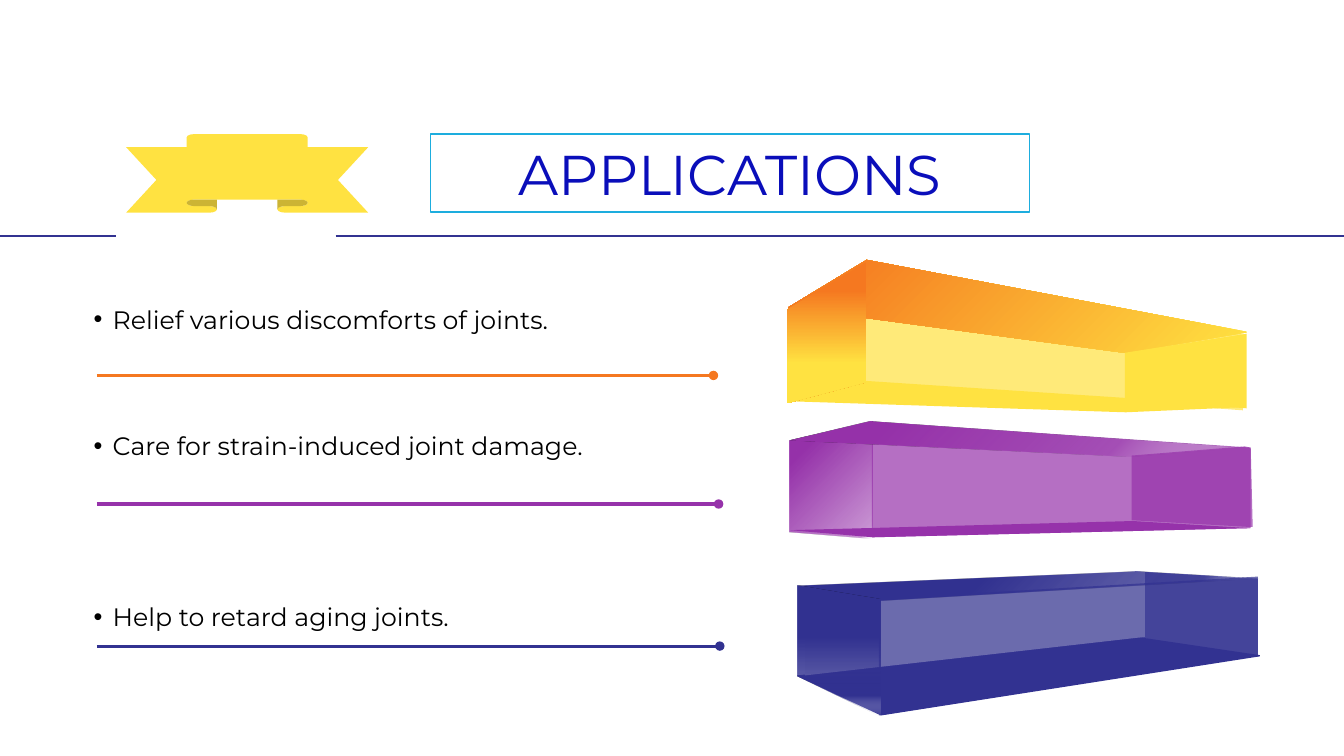
from pptx import Presentation
from pptx.dml.color import RGBColor
from pptx.enum import shapes, text
from pptx.oxml import parse_xml
from pptx.oxml.ns import qn
from pptx.util import Cm, Pt
from lxml import etree

# Theme: colours and type sizes
THEME = {
    "font": "Montserrat", "title_size": 40, "body_size": 18,
    "navy": "323291", "purple": "9632AA", "orange": "F57820", "yellow": "FFE241",
    "white": "FFFFFF", "pale": "F2F2F2", "black": "000000",
    "title": "0A0EBA", "frame": "1DADDE",
}

# Content, in centimetres
SLIDE_SIZE = (33.87, 19.05)
TITLE = "APPLICATIONS"
TITLE_BOX = (10.85, 3.38, 15.09, 1.96)
RIBBON_BOX = (3.18, 3.38, 6.1, 1.98)
HEADER_Y = 5.94
HEADER_RULES = [(0, 2.92), (8.46, 33.87)]
TEXT_LEFT, TEXT_WIDTH, TEXT_HEIGHT, INDENT = 2.11, 13.77, 1.02, 0.48
RULE_LEFT = 2.44

# Text, its top, end of the rule below it, rule colour
BENEFITS = [
    ("Relief various discomforts of joints.", 7.54, (17.98, 9.46), "orange"),
    ("Care for strain-induced joint damage.", 10.72, (18.11, 12.7), "purple"),
    ("Help to retard aging joints.", 15.04, (18.14, 16.28), "navy"),
]

# A gradient is (angle or "circle", stops); a stop is (position, colour, opacity)
NAVY_FADE = [(39, "navy", 100), (84, "navy", 70), (100, "white", 0)]
PURPLE_SIDE = [(21, "purple", 100), (93, "purple", 52), (100, "white", 0)]
PURPLE_TOP = [(20, "purple", 100), (72, "purple", 52), (100, "white", 0)]
ORANGE_SIDE = [(20, "orange", 100), (72, "yellow", 100), (100, "yellow", 100)]
ORANGE_TOP = [(0, "yellow", 100), (7, "orange", 100), (100, "yellow", 100)]

# Each glass block is a list of faces: (fill, corners); a plain fill is (colour, opacity)
NAVY_BLOCK = [
    (("navy", 100), [(28.65, 16.05), (20.09, 17.02), (20.09, 17.04), (22.2, 18.03),
                     (31.75, 16.54), (31.75, 16.51)]),
    (("navy", 70), [(31.7, 16.54), (31.7, 14.58), (28.6, 14.4), (28.6, 16.05)]),
    (("pale", 100), [(28.85, 16.05), (28.85, 14.4), (20.29, 14.78), (20.29, 17.02)]),
    ((45, NAVY_FADE), [(28.65, 14.4), (20.09, 14.76), (22.2, 15.14), (31.75, 14.58)]),
    (("navy", 70), [(22.15, 18.03), (31.7, 16.51), (31.7, 14.53), (22.15, 15.09)]),
    ((90, NAVY_FADE), [(20.09, 14.76), (20.09, 17.04), (22.2, 18.06), (22.2, 15.11)]),
]
PURPLE_BLOCK = [
    ((45, PURPLE_SIDE), [(21.97, 10.62), (19.89, 11.1), (19.89, 13.39), (22, 13.56),
                         (22, 10.62)]),
    (("purple", 70), [(31.52, 11.28), (21.97, 10.62), (21.97, 13.54), (31.52, 13.31)]),
    ((45, PURPLE_TOP), [(28.5, 11.51), (31.32, 11.28), (21.92, 10.62), (19.89, 11.1),
                        (28.45, 11.51)]),
    (("purple", 70), [(31.52, 11.28), (31.37, 11.25), (28.52, 11.48), (28.52, 13.11),
                      (31.5, 13.28), (31.57, 13.28)]),
    (("purple", 100), [(19.91, 13.36), (22, 13.54), (31.5, 13.31), (28.55, 13.13)]),
]
YELLOW_BLOCK = [
    (("yellow", 70), [(21.74, 6.63), (21.74, 9.65), (31.32, 10.34), (31.32, 8.43)]),
    (("circle", ORANGE_TOP), [(28.37, 8.89), (31.42, 8.38), (31.42, 8.36), (21.84, 6.55),
                              (19.86, 7.75), (28.32, 8.89)]),
    (("yellow", 100), [(31.42, 8.41), (28.35, 8.89), (28.35, 10.06), (31.42, 10.29)]),
    (("yellow", 100), [(19.84, 10.11), (21.84, 9.6), (28.4, 10.03), (31.34, 10.26),
                       (28.37, 10.39)]),
    ((90, ORANGE_SIDE), [(19.84, 7.8), (19.84, 10.16), (21.84, 9.63), (21.84, 6.6)]),
]


def color(name):
    return RGBColor.from_string(THEME[name])


def lengths(values):
    return [Cm(value) for value in values]


def color_xml(name, opacity):
    return f'<a:srgbClr val="{THEME[name]}"><a:alpha val="{opacity * 1000}"/></a:srgbClr>'


def paint(shape, fill):
    """Give a face a plain, see-through or gradient fill."""
    kind, value = fill
    if isinstance(value, list):
        stops = "".join(f'<a:gs pos="{position * 1000}">{color_xml(name, opacity)}</a:gs>'
                        for position, name, opacity in value)
        if kind == "circle":
            direction = ('<a:path path="circle">'
                         '<a:fillToRect r="100000" b="100000"/></a:path>')
        else:
            direction = f'<a:lin ang="{kind * 60000}" scaled="0"/>'
        tag, body = "gradFill", f"<a:gsLst>{stops}</a:gsLst>{direction}"
    else:
        tag, body = "solidFill", color_xml(kind, value)
    shape.fill.background()
    properties = shape.element.spPr
    xml = f'<a:{tag} xmlns:a="http://schemas.openxmlformats.org/drawingml/2006/main">{body}</a:{tag}>'
    properties.replace(properties.find(qn("a:noFill")), parse_xml(xml))


def add_block(slide, faces):
    group = slide.shapes.add_group_shape()
    for fill, corners in faces:
        start, *others = [lengths(corner) for corner in corners]
        builder = group.shapes.build_freeform(*start)
        builder.add_line_segments(others, close=True)
        shape = builder.convert_to_shape()
        shape.shadow.inherit = False
        shape.line.fill.background()
        paint(shape, fill)


def add_rule(slide, start, end, color_name, width, dot=False):
    rule = slide.shapes.add_connector(shapes.MSO_CONNECTOR.STRAIGHT,
                                      *lengths(start), *lengths(end))
    rule.line.color.rgb = color(color_name)
    rule.line.width = Pt(width)
    if dot:
        etree.SubElement(rule.line._get_or_add_ln(), qn("a:tailEnd"), type="oval")
    etree.SubElement(rule._element.spPr, qn("a:effectLst"))


def add_preset(slide, preset, box, fill_name):
    shape = slide.shapes.add_shape(preset, *lengths(box))
    shape.shadow.inherit = False
    shape.fill.solid()
    shape.fill.fore_color.rgb = color(fill_name)
    shape.line.fill.background()
    return shape


def write(shape, words, size, color_name, bullet=False):
    frame = shape.text_frame
    frame.word_wrap = True
    frame.auto_size = text.MSO_AUTO_SIZE.SHAPE_TO_FIT_TEXT
    paragraph = frame.paragraphs[0]
    paragraph.text = words
    paragraph.alignment = text.PP_ALIGN.LEFT if bullet else text.PP_ALIGN.CENTER
    if bullet:
        properties = paragraph._p.get_or_add_pPr()
        properties.set("marL", str(Cm(INDENT)))
        properties.set("indent", str(-Cm(INDENT)))
        etree.SubElement(properties, qn("a:buFont"), typeface="Arial")
        etree.SubElement(properties, qn("a:buChar"), char="•")
    paragraph.font.name = THEME["font"]
    paragraph.font.size = Pt(size)
    paragraph.font.color.rgb = color(color_name)


def main():
    presentation = Presentation()
    presentation.slide_width, presentation.slide_height = lengths(SLIDE_SIZE)
    slide = presentation.slides.add_slide(presentation.slide_layouts[6])

    # Header: title, ribbon and broken rule
    title = add_preset(slide, shapes.MSO_SHAPE.RECTANGLE, TITLE_BOX, "white")
    title.line.color.rgb = color("frame")
    title.line.width = Pt(1)
    write(title, TITLE, THEME["title_size"], "title")
    add_preset(slide, shapes.MSO_SHAPE.UP_RIBBON, RIBBON_BOX, "yellow")
    for left, right in HEADER_RULES:
        add_rule(slide, (left, HEADER_Y), (right, HEADER_Y), "navy", 1.5)

    # Glass blocks
    for faces in (NAVY_BLOCK, PURPLE_BLOCK, YELLOW_BLOCK):
        add_block(slide, faces)

    # Benefits, each above its dotted rule
    for words, top, end, color_name in BENEFITS:
        box = slide.shapes.add_textbox(*lengths((TEXT_LEFT, top, TEXT_WIDTH, TEXT_HEIGHT)))
        write(box, words, THEME["body_size"], "black", bullet=True)
        add_rule(slide, (RULE_LEFT, end[1]), end, color_name, 2.25, dot=True)

    presentation.save("out.pptx")


if __name__ == "__main__":
    main()
